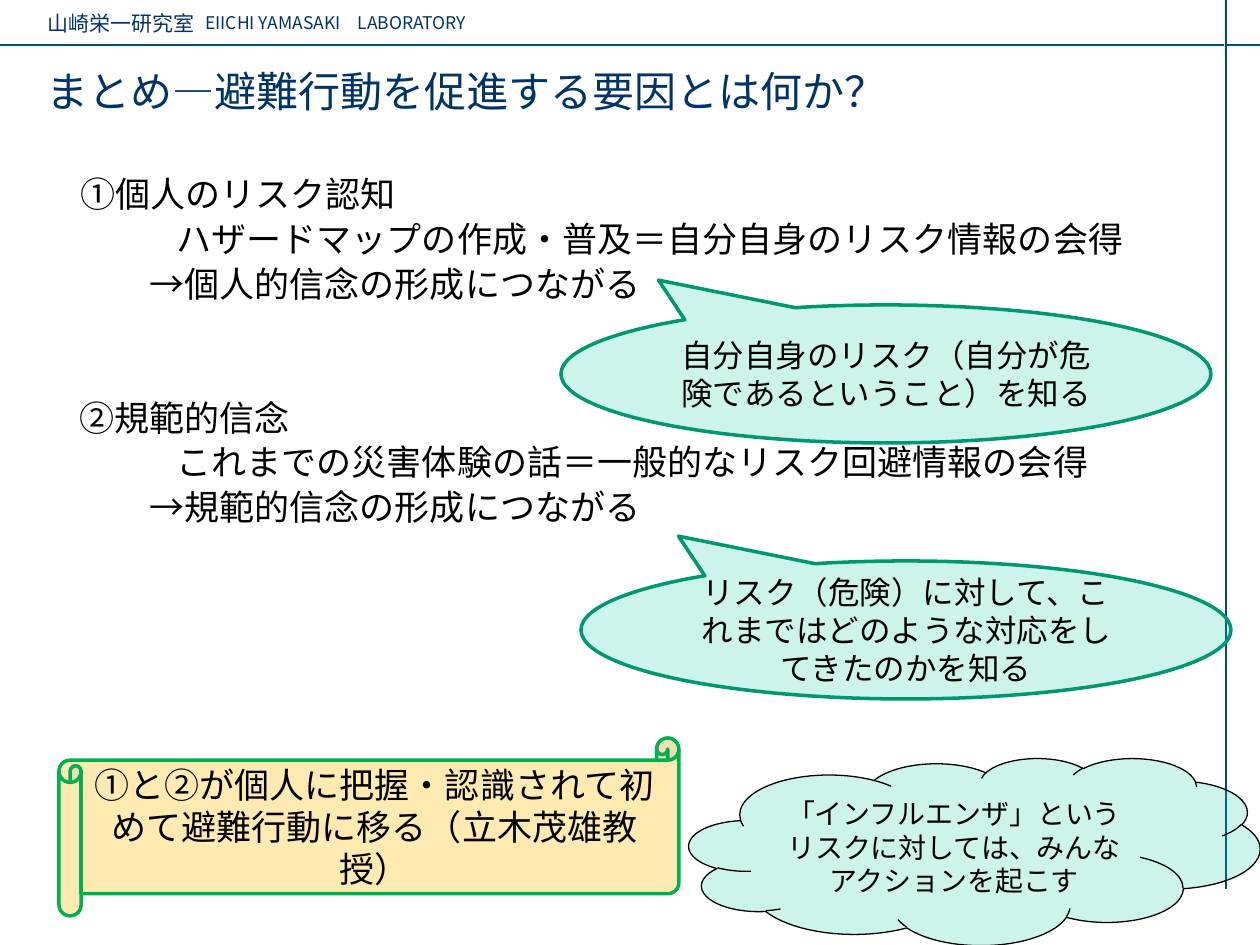
import pptx
import pptx.dml.color
import pptx.enum.shapes
import pptx.enum.text
import pptx.oxml
import pptx.oxml.ns
import pptx.util

RGBColor = pptx.dml.color.RGBColor
SHAPE = pptx.enum.shapes.MSO_SHAPE
ALIGN = pptx.enum.text.PP_ALIGN
ANCHOR = pptx.enum.text.MSO_ANCHOR
Pt = pptx.util.Pt

EMU_PER_PX = 914400 / 126
SANS = "Noto Sans CJK JP"
SERIF = "Times New Roman"
NAVY = RGBColor(0x00, 0x33, 0x66)
TEAL = RGBColor(0x02, 0x4D, 0x6E)
PALE_GRAY = RGBColor(0xEE, 0xEE, 0xEE)
BLACK = RGBColor(0x00, 0x00, 0x00)
MINT = RGBColor(0x00, 0xCC, 0x99)
DARK_MINT = RGBColor(0x00, 0x97, 0x71)
AMBER = RGBColor(0xFF, 0xC0, 0x00)
GREEN = RGBColor(0x00, 0xB0, 0x50)

HEADINGS_AND_POINTS = [
    ("①個人のリスク認知", 9, 0),
    ("ハザードマップの作成・普及＝自分自身のリスク情報の会得", 105, 4),
    ("→個人的信念の形成につながる", 78, 4),
    ("②規範的信念", 8, 55),
    ("これまでの災害体験の話＝一般的なリスク回避情報の会得", 105, 4),
    ("→規範的信念の形成につながる", 78, 4),
]
CALLOUTS = [
    ("自分自身のリスク（自分が危険であるということ）を知る", 561, 305),
    ("リスク（危険）に対して、これまではどのような対応をしてきたのかを知る", 581, 561),
]


def px(value):
    return pptx.util.Emu(round(value * EMU_PER_PX))


def place(shape, left, top, width, height):
    shape.left, shape.top = px(left), px(top)
    shape.width, shape.height = px(width), px(height)


def append_xml(parent, tag, attributes=""):
    namespace = pptx.oxml.ns.nsdecls("a")
    parent.append(pptx.oxml.parse_xml(f"<a:{tag} {namespace} {attributes}/>"))


def format_font(paragraph, size, name, color):
    paragraph.font.size = Pt(size)
    paragraph.font.name = name
    paragraph.font.color.rgb = color


def add_label(slide, text, box, size, name):
    label = slide.shapes.add_textbox(*map(px, box))
    label.text_frame.word_wrap = True
    paragraph = label.text_frame.paragraphs[0]
    paragraph.text = text
    format_font(paragraph, size, name, NAVY)


def add_rule(slide, start, end, color, width):
    rule = slide.shapes.add_connector(
        pptx.enum.shapes.MSO_CONNECTOR.STRAIGHT, *map(px, start + end)
    )
    rule.line.color.rgb = color
    rule.line.width = Pt(width)
    append_xml(rule._element.spPr, "effectLst")


def fill_title(title):
    place(title, 34, 59, 1160, 64)
    frame = title.text_frame
    frame.auto_size = pptx.enum.text.MSO_AUTO_SIZE.NONE
    frame.vertical_anchor = ANCHOR.MIDDLE
    paragraph = frame.paragraphs[0]
    paragraph.text = "まとめ―避難行動を促進する要因とは何か？"
    paragraph.alignment = ALIGN.LEFT
    format_font(paragraph, 24, SANS, NAVY)


def fill_body(body):
    place(body, 59, 171, 1172, 383)
    frame = body.text_frame
    frame.auto_size = pptx.enum.text.MSO_AUTO_SIZE.NONE
    for index, (text, margin, space) in enumerate(HEADINGS_AND_POINTS):
        paragraph = frame.add_paragraph() if index else frame.paragraphs[0]
        paragraph.text = text
        paragraph.line_spacing = 0.9
        paragraph.space_before = Pt(space)
        properties = paragraph._p.get_or_add_pPr()
        properties.set("marL", str(px(margin)))
        properties.set("indent", "0")
        append_xml(properties, "buNone")
        format_font(paragraph, 20, SERIF, BLACK)


def add_note(slide, kind, text, box, size, fill, opacity, line, line_width):
    note = slide.shapes.add_shape(kind, *map(px, box))
    note.shadow.inherit = False
    note.fill.solid()
    note.fill.fore_color.rgb = fill
    color = note._element.spPr.find(".//" + pptx.oxml.ns.qn("a:srgbClr"))
    append_xml(color, "alpha", f'val="{opacity * 1000}"')
    note.line.color.rgb = line
    note.line.width = Pt(line_width)
    frame = note.text_frame
    frame.word_wrap = True
    frame.vertical_anchor = ANCHOR.MIDDLE
    paragraph = frame.paragraphs[0]
    paragraph.text = text
    paragraph.alignment = ALIGN.CENTER
    format_font(paragraph, size, SERIF, BLACK)
    return note


def main():
    presentation = pptx.Presentation()
    presentation.slide_width = px(1260)
    presentation.slide_height = px(945)
    slide = presentation.slides.add_slide(presentation.slide_layouts[1])

    add_label(slide, "山崎栄一研究室", (35, 4, 387, 38), 12, SERIF)
    add_label(slide, "EIICHI YAMASAKI　LABORATORY", (193, 6, 714, 34), 10, SANS)
    add_rule(slide, (0, 45), (1260, 45), TEAL, 1.5)
    add_rule(slide, (1225, 55), (1225, 0), PALE_GRAY, 0.75)
    add_rule(slide, (1226, 0), (1226, 889), TEAL, 0.75)

    fill_title(slide.shapes.title)
    fill_body(slide.placeholders[1])

    for text, left, top in CALLOUTS:
        callout = add_note(slide, SHAPE.OVAL_CALLOUT, text, (left, top, 650, 138),
                           18, MINT, 20, DARK_MINT, 2)
        callout.adjustments[0] = -0.35
        callout.adjustments[1] = -0.68
    add_note(slide, SHAPE.HORIZONTAL_SCROLL,
             "①と②が個人に把握・認識されて初めて避難行動に移る（立木茂雄教授）",
             (59, 738, 620, 178), 20, AMBER, 30, GREEN, 2)
    add_note(slide, SHAPE.CLOUD,
             "「インフルエンザ」というリスクに対しては、みんなアクションを起こす",
             (689, 758, 571, 187), 16, MINT, 20, BLACK, 0.75)

    presentation.save("out.pptx")


if __name__ == "__main__":
    main()
